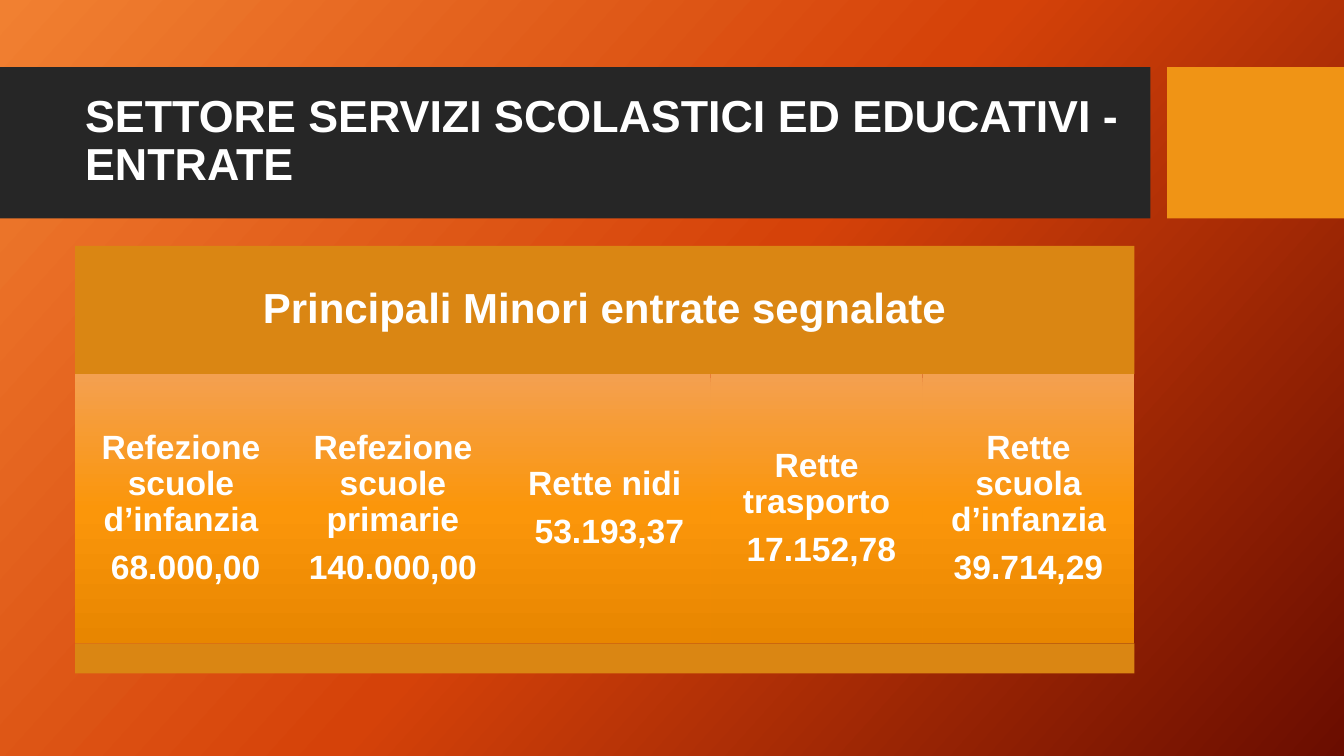
from pptx import Presentation
from pptx.dml.color import RGBColor
from pptx.enum.shapes import MSO_SHAPE
from pptx.enum.text import MSO_ANCHOR, PP_ALIGN
from pptx.oxml.ns import qn
from pptx.util import Pt
from lxml.etree import SubElement

COLOURS = {"band": "262626", "accent": "F09415", "panel": "DA8613", "text": "FFFFFF"}
BACKGROUND_STOPS = [(0, "F18031"), (50, "D54209"), (100, "6A0D00")]
COLUMN_STOPS = [(0, "F4A050"), (50, "FB960A"), (100, "E88600")]
REVENUES = [
    ("Refezione scuole d’infanzia", " 68.000,00"),
    ("Refezione scuole primarie", "140.000,00"),
    ("Rette nidi", " 53.193,37"),
    ("Rette trasporto", " 17.152,78"),
    ("Rette scuola d’infanzia", "39.714,29"),
]
PANEL_LEFT, PANEL_WIDTH = 53.6, 756.7
HEADING_TOP, COLUMN_TOP, FOOT_TOP, FOOT_HEIGHT = 175.7, 267.3, 459.6, 21.4


class SlideBuilder:
    """Hold the text style and the current slide, and add its elements."""

    def __init__(self, presentation, font="Arial"):
        self.font = font
        self.slide = presentation.slides.add_slide(presentation.slide_layouts[5])

    def set_gradient(self, fill, element, stops, angle):
        fill.gradient()
        gradient = next(element.iter(qn("a:gradFill")))
        stop_list = gradient.find(qn("a:gsLst"))
        for stop in list(stop_list):
            stop_list.remove(stop)
        for position, colour in stops:
            stop = SubElement(stop_list, qn("a:gs"), pos=str(position * 1000))
            SubElement(stop, qn("a:srgbClr"), val=colour)
        gradient.find(qn("a:lin")).set("ang", str(angle * 60000))

    def background(self, stops, angle):
        self.set_gradient(self.slide.background.fill, self.slide.element, stops, angle)

    def rectangle(self, left, top, width, height, colour=None, stops=None):
        shape = self.slide.shapes.add_shape(
            MSO_SHAPE.RECTANGLE, Pt(left), Pt(top), Pt(width), Pt(height))
        shape.shadow.inherit = False
        shape.line.fill.background()
        if stops:
            self.set_gradient(shape.fill, shape.element, stops, 90)
        else:
            shape.fill.solid()
            shape.fill.fore_color.rgb = RGBColor.from_string(COLOURS[colour])
        return shape

    def add_text(self, shape, lines, size, inset, alignment=PP_ALIGN.CENTER, space_ratio=0.35):
        frame = shape.text_frame
        frame.word_wrap = True
        frame.vertical_anchor = MSO_ANCHOR.MIDDLE
        frame.margin_left = frame.margin_right = Pt(inset)
        frame.margin_top = frame.margin_bottom = Pt(inset)
        for index, line in enumerate(lines):
            paragraph = frame.add_paragraph() if index else frame.paragraphs[0]
            paragraph.alignment = alignment
            paragraph.line_spacing = 0.9
            paragraph.space_before = Pt(0)
            paragraph.space_after = Pt(size * space_ratio)
            run = paragraph.add_run()
            run.text = line
            run.font.name = self.font
            run.font.size = Pt(size)
            run.font.bold = True
            run.font.color.rgb = RGBColor.from_string(COLOURS["text"])

    def title(self, text, left, top, width, height):
        title = self.slide.shapes.title
        title.left, title.top, title.width, title.height = map(Pt, (left, top, width, height))
        self.add_text(title, [text], 32, 7.2, PP_ALIGN.LEFT, 0)
        tree = title.element.getparent()
        tree.remove(title.element)
        tree.append(title.element)


def main():
    presentation = Presentation()
    presentation.slide_width, presentation.slide_height = Pt(960), Pt(540)
    builder = SlideBuilder(presentation)
    builder.background(BACKGROUND_STOPS, 42)
    builder.rectangle(0, 48, 821.8, 108, "band")
    builder.rectangle(833.6, 48, 126.4, 108, "accent")
    builder.title("SETTORE SERVIZI SCOLASTICI ED EDUCATIVI - ENTRATE",
                  PANEL_LEFT, 59, PANEL_WIDTH, 85)

    heading = builder.rectangle(
        PANEL_LEFT, HEADING_TOP, PANEL_WIDTH, COLUMN_TOP - HEADING_TOP, "panel")
    builder.add_text(heading, ["Principali Minori entrate segnalate"], 30, 9)
    column_width = PANEL_WIDTH / len(REVENUES)
    for index, lines in enumerate(REVENUES):
        column = builder.rectangle(
            PANEL_LEFT + index * column_width, COLUMN_TOP,
            column_width, FOOT_TOP - COLUMN_TOP, stops=COLUMN_STOPS)
        builder.add_text(column, lines, 24, 7.2)
    builder.rectangle(PANEL_LEFT, FOOT_TOP, PANEL_WIDTH, FOOT_HEIGHT, "panel")
    presentation.save("out.pptx")


if __name__ == "__main__":
    main()
